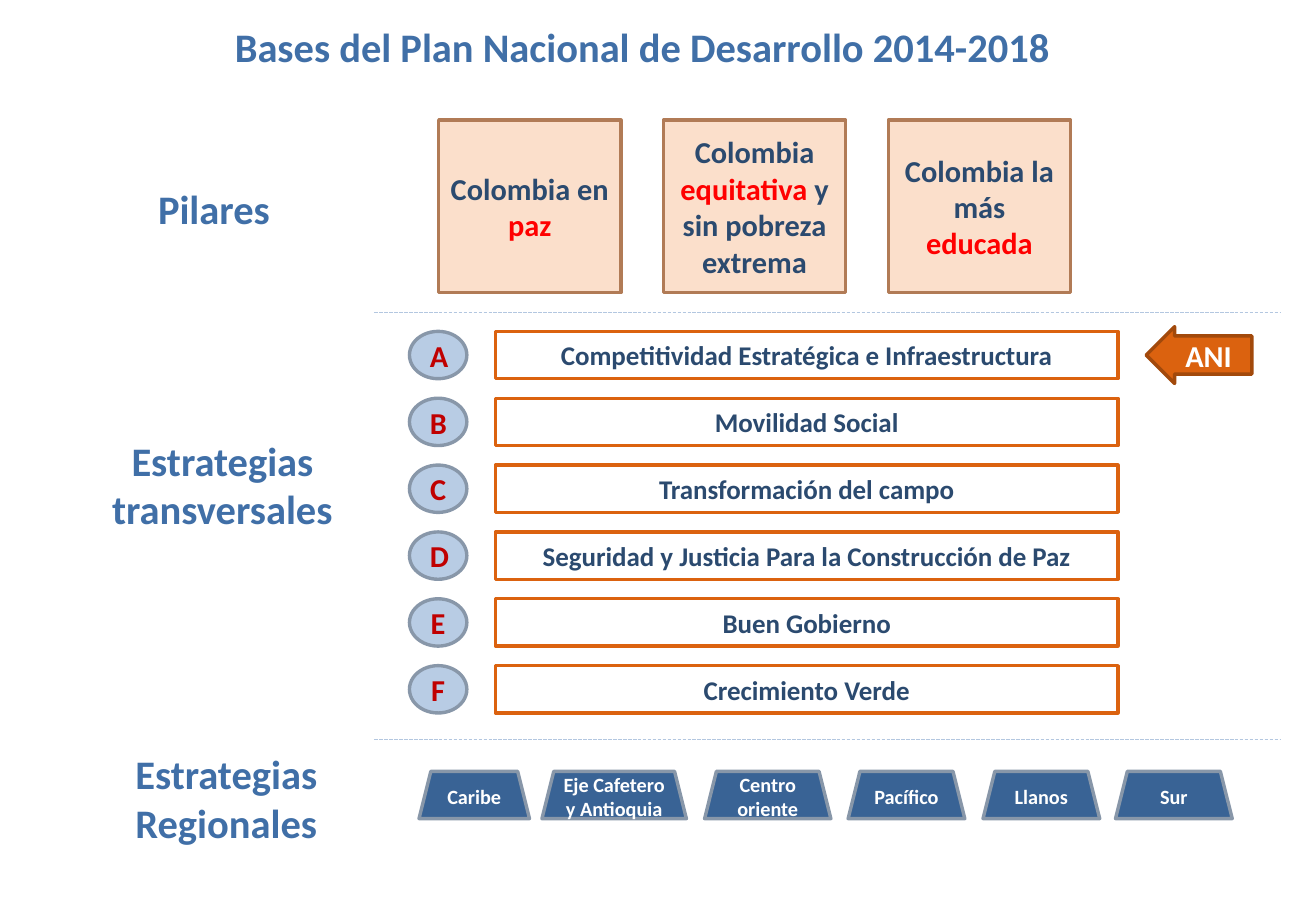
from lxml import etree
from pptx import Presentation
from pptx.dml.color import RGBColor
from pptx.enum import dml, shapes, text
from pptx.oxml.ns import qn
from pptx.util import Cm, Pt

FONT = "Calibri"
HEADING, NAVY, RED = "406FA7", "2B4A6F", "FF0000"
ORANGE, STEEL = "DB620F", "8897A9"

# Each pillar is a list of (words, colour)
PILLARS = [
    [("Colombia en ", NAVY), ("paz", RED)],
    [("Colombia ", NAVY), ("equitativa", RED), (" y sin pobreza extrema", NAVY)],
    [("Colombia la más ", NAVY), ("educada", RED)],
]
STRATEGIES = [
    "Competitividad Estratégica e Infraestructura",
    "Movilidad Social",
    "Transformación del campo",
    "Seguridad y Justicia Para la Construcción de Paz",
    "Buen Gobierno",
    "Crecimiento Verde",
]
# Region name, offset from the left of the row, width (cm)
REGIONS = [
    ("Caribe", 0, 2.31),
    ("Eje Cafetero y Antioquia", 2.57, 3.02),
    ("Centro oriente", 5.97, 2.64),
    ("Pacífico", 8.97, 2.44),
    ("Llanos", 11.79, 2.44),
    ("Sur", 14.56, 2.44),
]


def colour(value):
    return RGBColor.from_string(value)


def write(frame, pieces, size):
    """Fill a frame with one centred bold paragraph of coloured pieces."""
    frame.word_wrap = True
    paragraph = frame.paragraphs[0]
    paragraph.alignment = text.PP_ALIGN.CENTER
    for words, ink in pieces:
        run = paragraph.add_run()
        run.text = words
        run.font.name, run.font.size, run.font.bold = FONT, Pt(size), True
        run.font.color.rgb = colour(ink)


def add_block(slide, kind, box, fill, line, pieces, size):
    block = slide.shapes.add_shape(kind, *map(Cm, box))
    block.shadow.inherit = False
    block.fill.solid()
    block.fill.fore_color.rgb = colour(fill)
    block.line.color.rgb = colour(line)
    block.line.width = Pt(2)
    block.text_frame.vertical_anchor = text.MSO_ANCHOR.MIDDLE
    write(block.text_frame, pieces, size)
    return block


def add_title(slide, box):
    title = slide.shapes.title
    title.left, title.top, title.width, title.height = map(Cm, box)
    title.text_frame.auto_size = text.MSO_AUTO_SIZE.NONE
    title.text_frame.vertical_anchor = text.MSO_ANCHOR.TOP
    write(title.text_frame, [("Bases del Plan Nacional de Desarrollo 2014-2018", HEADING)], 24)


def add_section_label(slide, box, words):
    label = slide.shapes.add_textbox(*map(Cm, box))
    write(label.text_frame, [(words, HEADING)], 24)


def add_divider(slide, left, top, width):
    divider = slide.shapes.add_connector(
        shapes.MSO_CONNECTOR.STRAIGHT, Cm(left), Cm(top), Cm(left + width), Cm(top))
    divider.line.color.rgb = colour("B3C7E0")
    divider.line.width = Pt(0.75)
    divider.line.dash_style = dml.MSO_LINE.SQUARE_DOT
    etree.SubElement(divider.element.spPr, qn("a:effectLst"))


def add_pillars(slide, box):
    left, top, width, height = box
    side = 3.81
    step = (width - side) / (len(PILLARS) - 1)
    for i, pieces in enumerate(PILLARS):
        add_block(slide, shapes.MSO_SHAPE.RECTANGLE, (left + i * step, top, side, height),
                  "FBDFCB", "B17B56", pieces, 18)


def add_strategies(slide, box):
    left, top, width, height = box
    row_height, bar_left = 0.99, 1.8
    step = (height - row_height) / (len(STRATEGIES) - 1)
    for i, strategy in enumerate(STRATEGIES):
        row_top = top + i * step
        add_block(slide, shapes.MSO_SHAPE.OVAL, (left, row_top, 1.2, row_height),
                  "B8CCE4", STEEL, [("ABCDEF"[i], "C00000")], 18)
        add_block(slide, shapes.MSO_SHAPE.RECTANGLE,
                  (left + bar_left, row_top, width - bar_left, row_height),
                  "FFFFFF", ORANGE, [(strategy, NAVY)], 16)
    # Arrow pointing at the first strategy
    agency = add_block(slide, shapes.MSO_SHAPE.LEFT_ARROW,
                       (left + width + 0.59, top - 0.1, 2.21, 1.19),
                       ORANGE, "A2490B", [("ANI", "FFFFFF")], 18)
    agency.adjustments[0] = 0.67


def add_regions(slide, left, top, height):
    for region, offset, width in REGIONS:
        add_block(slide, shapes.MSO_SHAPE.TRAPEZOID, (left + offset, top, width, height),
                  "396395", STEEL, [(region, "FFFFFF")], 12)


def main():
    deck = Presentation()
    deck.slide_width, deck.slide_height = Cm(27.51), Cm(19.05)
    slide = deck.slides.add_slide(deck.slide_layouts.get_by_name("Title Only"))
    add_title(slide, (4.17, 0.33, 18.52, 1.27))

    # Pillars
    add_section_label(slide, (2.57, 3.73, 3.81, 1.27), "Pilares")
    add_pillars(slide, (9.17, 2.51, 13.21, 3.61))
    add_divider(slide, 7.82, 6.53, 18.95)

    # Cross-cutting strategies
    add_section_label(slide, (1.55, 8.99, 6.2, 2.31), "Estrategias transversales")
    add_strategies(slide, (8.56, 6.93, 14.81, 7.98))
    add_divider(slide, 7.82, 15.47, 18.95)

    # Regional strategies
    add_section_label(slide, (1.63, 15.54, 6.2, 2.31), "Estrategias Regionales")
    add_regions(slide, 8.76, 16.13, 0.99)

    deck.save("out.pptx")


if __name__ == "__main__":
    main()
